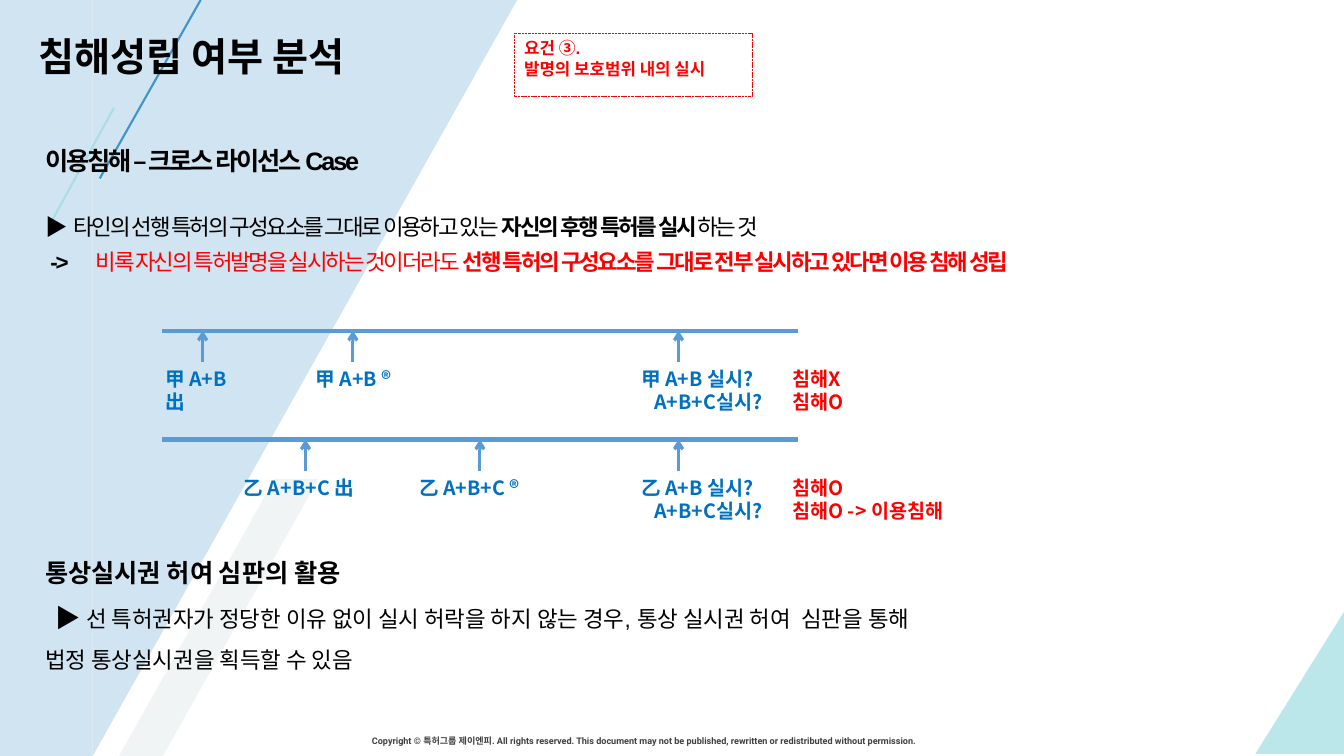
from lxml import etree
from pptx import Presentation
from pptx.dml.color import RGBColor
from pptx.enum.dml import MSO_LINE
from pptx.enum.shapes import MSO_CONNECTOR, MSO_SHAPE
from pptx.enum.text import MSO_ANCHOR, PP_ALIGN
from pptx.oxml.ns import qn
from pptx.util import Inches, Pt

RECT, TRIANGLE, SLANT = MSO_SHAPE.RECTANGLE, MSO_SHAPE.RIGHT_TRIANGLE, MSO_SHAPE.PARALLELOGRAM
STRAIGHT, DASH = MSO_CONNECTOR.STRAIGHT, MSO_LINE.SQUARE_DOT
TOP, LEFT = MSO_ANCHOR.TOP, PP_ALIGN.LEFT
WIDTH, HEIGHT = 13.33, 7.5
HANGUL, LATIN, SMALL = "Noto Sans CJK KR", "Arial", "Roboto"
BLACK, RED, BLUE, RAIL = "000000", "FF0000", "0070C0", "5B9BD5"
NAVY, MINT = "016DB2", "98DBE0"

BACKDROP = [
    (RECT, (0, 0, 0.92, HEIGHT), NAVY, 18, None),
    (TRIANGLE, (0.92, 0, 4.21, HEIGHT), NAVY, 18, "flipV"),
    (SLANT, (1.18, 4.75, 1.98, 2.75), "F0F4F5", 100, None),
    (TRIANGLE, (12.45, 6.07, 0.88, 1.41), MINT, 65, "flipH"),
]
STREAKS = [((1.99, 0), (0.99, 1.77), NAVY), ((1.13, 1.07), (0.51, 2.2), MINT)]

COPYRIGHT = ("Copyright © 특허그룹 제이엔피. All rights reserved. This document may not be "
             "published, rewritten or redistributed without permission.")
TITLE = "침해성립 여부 분석"
REQUIREMENT = ["요건 ③.", "발명의 보호범위 내의 실시"]

CROSS_LICENSE = [
    dict(runs=["이용침해 – 크로스 라이선스 Case"], size=18, bold=True, spacing=-1.5),
    dict(runs=["▶\t타인의 선행 특허의 구성요소를 그대로 이용하고 있는 ",
               ("자신의 후행 특허를 실시", dict(bold=True)), "하는 것"],
         size=16, spacing=-1.5, line=Pt(25), before=21, tab=0.28),
    dict(runs=[("->\t", dict(bold=True)),
               ("비록 자신의 특허발명을 실시하는 것이더라도 ", dict(color=RED)),
               ("선행 특허의 구성요소를 그대로 전부 실시하고 있다면 이용 침해 성립",
                dict(color=RED, bold=True))],
         size=16, spacing=-1.5, line=Pt(25), indent=0.05, tab=0.32),
]
TRIAL = [
    dict(runs=["통상실시권 허여 심판의 활용"], size=18, bold=True),
    dict(runs=[("▶ ", dict(size=18)),
               "선 특허권자가 정당한 이유 없이 실시 허락을 하지 않는 경우, 통상 실시권 허여\t"
               "심판을 통해 법정 통상실시권을 획득할 수 있음"],
         size=16, line=1.5, indent=0.1, tab=7.94),
]

RAIL_START, RAIL_END, ARROW = 1.61, 7.91, 0.31
PRACTICE_X, PRACTICE_LEFT = 6.73, 6.26
TIMELINES = [
    dict(y=3.28, owner="甲", verdicts=["침해X", "침해O"], width=2.4,
         events=[(2.01, 1.54, 1.13, ["甲 A+B", "出"]), (3.5, 3.03, 1.15, ["甲 A+B ®"])]),
    dict(y=4.36, owner="乙", verdicts=["침해O", "침해O -> 이용침해"], width=3.4,
         events=[(3.03, 2.32, 1.4, ["乙 A+B+C 出"]), (4.76, 4.06, 1.38, ["乙 A+B+C ®"])]),
]


def rgb(value):
    """Turn a hex string into a colour."""
    return RGBColor.from_string(value)


def set_alpha(fill_format, percent):
    """Make a solid fill partly transparent."""
    color = fill_format._xPr.find(qn("a:solidFill"))[0]
    etree.SubElement(color, qn("a:alpha")).set("val", str(percent * 1000))


def style(font, size=None, bold=None, color=None):
    """Apply the given character settings."""
    if size:
        font.size = Pt(size)
    if bold is not None:
        font.bold = bold
    if color:
        font.color.rgb = rgb(color)


def write(frame, paragraphs, face, color=BLACK, wrap=True):
    """Fill a text frame with paragraphs."""
    frame.word_wrap, frame.vertical_anchor = wrap, TOP
    for index, item in enumerate(paragraphs):
        paragraph = frame.add_paragraph() if index else frame.paragraphs[0]
        paragraph.alignment = LEFT
        if "line" in item:
            paragraph.line_spacing = item["line"]
        if "before" in item:
            paragraph.space_before = Pt(item["before"])
        props = paragraph._p.get_or_add_pPr()
        if "indent" in item:
            props.set("marL", "0")
            props.set("indent", str(Inches(item["indent"])))
        if "tab" in item:
            stops = etree.SubElement(props, qn("a:tabLst"))
            etree.SubElement(stops, qn("a:tab"), pos=str(Inches(item["tab"])), algn="l")
        style(paragraph.font, item["size"], item.get("bold", False), color)
        paragraph.font.name = face
        defaults = props.find(qn("a:defRPr"))
        etree.SubElement(defaults, qn("a:ea")).set("typeface", HANGUL)
        if "spacing" in item:
            defaults.set("spc", str(int(item["spacing"] * 100)))
        for part in item["runs"]:
            words, look = part if isinstance(part, tuple) else (part, {})
            run = paragraph.add_run()
            run.text = words
            style(run.font, **look)


def add_text(slide, box, paragraphs, face, **options):
    """Place a text box."""
    frame = slide.shapes.add_textbox(*map(Inches, box)).text_frame
    write(frame, paragraphs, face, **options)


def add_line(slide, start, end, color, weight, alpha=100, arrow=False):
    """Draw a straight line, with an arrowhead if asked."""
    connector = slide.shapes.add_connector(STRAIGHT, *map(Inches, start + end))
    connector.line.color.rgb = rgb(color)
    connector.line.width = Pt(weight)
    if alpha < 100:
        set_alpha(connector.line.fill, alpha)
    if arrow:
        etree.SubElement(connector.line._get_or_add_ln(), qn("a:tailEnd")).set("type", "arrow")
    etree.SubElement(connector._element.spPr, qn("a:effectLst"))


def add_backdrop(slide):
    """Draw the tinted shapes and streaks."""
    for kind, box, color, alpha, flip in BACKDROP:
        panel = slide.shapes.add_shape(kind, *map(Inches, box))
        panel.shadow.inherit = False
        panel.fill.solid()
        panel.fill.fore_color.rgb = rgb(color)
        set_alpha(panel.fill, alpha)
        panel.line.fill.background()
        if kind == SLANT:
            panel.adjustments[0] = 0.78
        if flip:
            panel._element.spPr.find(qn("a:xfrm")).set(flip, "1")
    for start, end, color in STREAKS:
        add_line(slide, start, end, color, 1.5, 67)


def add_timeline(slide, y, owner, verdicts, width, events):
    """Draw one patent owner's rail with its events and verdicts."""
    add_line(slide, (RAIL_START, y), (RAIL_END, y), RAIL, 3)
    label_y = y + ARROW
    for x in [event[0] for event in events] + [PRACTICE_X]:
        add_line(slide, (x, label_y), (x, y), RAIL, 2.25, arrow=True)
    for _, left, label_width, lines in events:
        labels = [dict(runs=[words], size=14, bold=True) for words in lines]
        add_text(slide, (left, label_y, label_width, 0.34), labels, HANGUL, color=BLUE, wrap=False)
    acts = [(f"{owner} A+B 실시?\t", 0), ("A+B+C실시?\t", 0.13)]
    rows = [dict(runs=[act, (verdict, dict(color=RED))], size=14, bold=True, indent=indent, tab=1.39)
            for (act, indent), verdict in zip(acts, verdicts)]
    add_text(slide, (PRACTICE_LEFT, label_y, width, 0.57), rows, HANGUL, color=BLUE)


def add_requirement(slide):
    """Draw the dashed requirement box."""
    callout = slide.shapes.add_shape(RECT, *map(Inches, (5.1, 0.33, 2.36, 0.63)))
    callout.shadow.inherit = False
    callout.fill.background()
    callout.line.color.rgb = rgb(RED)
    callout.line.width = Pt(0.25)
    callout.line.dash_style = DASH
    lines = [dict(runs=[words], size=12, bold=True) for words in REQUIREMENT]
    write(callout.text_frame, lines, LATIN, color=RED)


def main():
    """Build and save the slide."""
    deck = Presentation()
    deck.slide_width, deck.slide_height = Inches(WIDTH), Inches(HEIGHT)
    slide = deck.slides.add_slide(deck.slide_layouts[6])
    add_backdrop(slide)
    add_text(slide, (3.59, 7.25, 8.29, 0.21), [dict(runs=[COPYRIGHT], size=6.5, bold=True)],
             SMALL, color="404040")
    add_text(slide, (0.35, 1.39, 11.52, 1.41), CROSS_LICENSE, LATIN)
    for timeline in TIMELINES:
        add_timeline(slide, **timeline)
    add_text(slide, (0.35, 5.48, 8.91, 1.26), TRIAL, LATIN)
    add_requirement(slide)
    add_text(slide, (0.28, 0.27, 11.6, 0.57), [dict(runs=[TITLE], size=28, bold=True)], HANGUL)
    deck.save("out.pptx")


if __name__ == "__main__":
    main()
